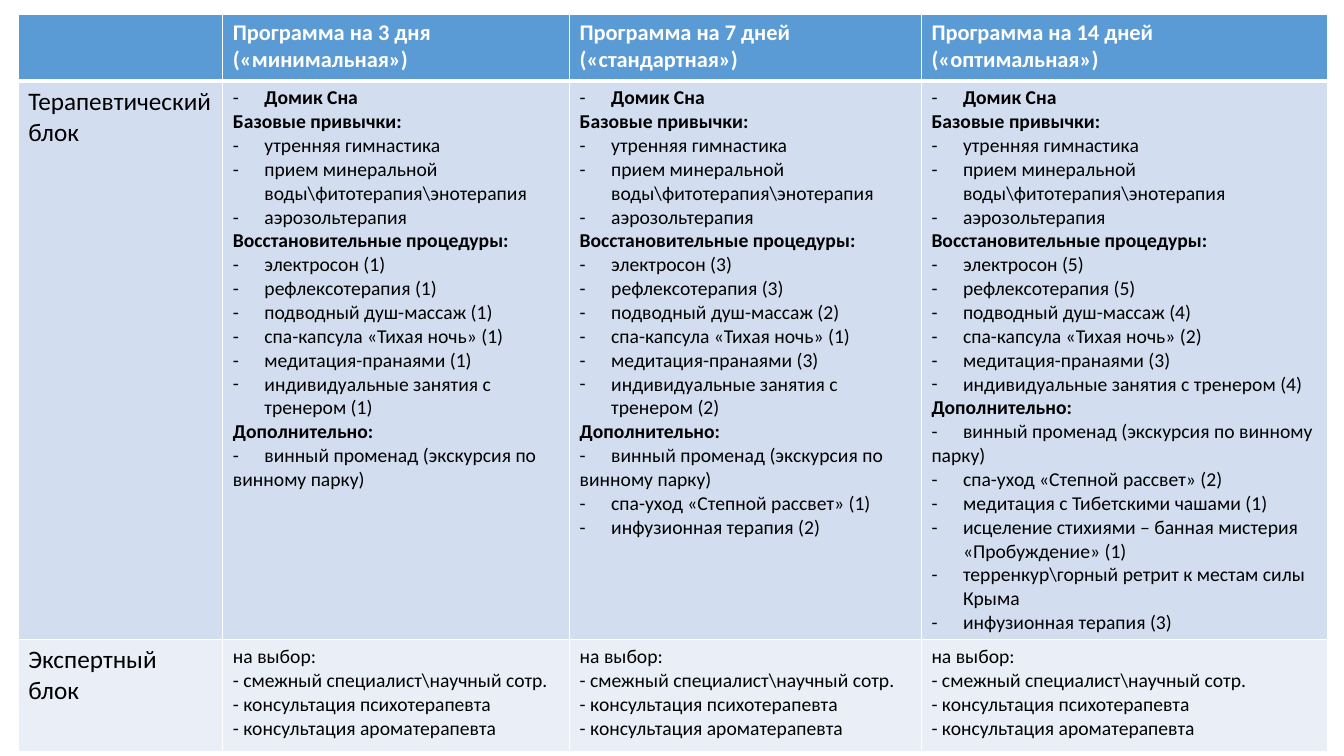
"""Build the slide with the table of sleep programmes for 3, 7 and 14 days."""
import lxml.etree
import pptx
import pptx.dml.color
import pptx.oxml.ns
import pptx.util

WHITE = pptx.dml.color.RGBColor(0xFF, 0xFF, 0xFF)
BLACK = pptx.dml.color.RGBColor(0x00, 0x00, 0x00)
HEADER_BLUE = pptx.dml.color.RGBColor(0x5B, 0x9B, 0xD5)
THERAPY_BLUE = pptx.dml.color.RGBColor(0xD2, 0xDE, 0xEF)
EXPERT_BLUE = pptx.dml.color.RGBColor(0xEA, 0xEF, 0xF7)

COLUMN_WIDTHS = [146.2, 247.7, 251.3, 290.2]
ROW_HEIGHTS = [48, 396, 80]
ROW_FILLS = [HEADER_BLUE, THERAPY_BLUE, EXPERT_BLUE]
BULLET_INDENT = pptx.util.Pt(22.5)

HEADER = {"size": pptx.util.Pt(16), "bold": True}
LABEL = {"size": pptx.util.Pt(18), "bold": False}
BODY = {"size": pptx.util.Pt(14), "bold": False}
BOLD_BODY = {"size": pptx.util.Pt(14), "bold": True}

HABITS = ["утренняя гимнастика", r"прием минеральной воды\фитотерапия\энотерапия", "аэрозольтерапия"]
PROCEDURES = [
    "электросон",
    "рефлексотерапия",
    "подводный душ-массаж",
    "спа-капсула «Тихая ночь»",
    "медитация-пранаями",
    "индивидуальные занятия с тренером",
]
WINE_WALK = "-\tвинный променад (экскурсия по винному парку)"
EXPERTS = [
    "на выбор:",
    r"- смежный специалист\научный сотр.",
    "- консультация психотерапевта",
    "- консультация ароматерапевта",
]
PROGRAMMES = [
    ("Программа на 3 дня", "(«минимальная»)", [1, 1, 1, 1, 1, 1], []),
    ("Программа на 7 дней", "(«стандартная»)", [3, 3, 2, 1, 3, 2],
     ["спа-уход «Степной рассвет» (1)", "инфузионная терапия (2)"]),
    ("Программа на 14 дней", "(«оптимальная»)", [5, 5, 4, 2, 3, 4],
     ["спа-уход «Степной рассвет» (2)",
      "медитация с Тибетскими чашами (1)",
      "исцеление стихиями – банная мистерия «Пробуждение» (1)",
      r"терренкур\горный ретрит к местам силы Крыма",
      "инфузионная терапия (3)"]),
]


def add_child(parent, tag, **attributes):
    child = lxml.etree.SubElement(parent, pptx.oxml.ns.qn(tag))
    for name, value in attributes.items():
        child.set(name, str(value))
    return child


def fill_cell(cell, lines, color):
    for index, (text, text_format, bulleted) in enumerate(lines):
        paragraphs = cell.text_frame.paragraphs
        paragraph = cell.text_frame.add_paragraph() if index else paragraphs[0]
        run = paragraph.add_run()
        run.text = text
        run.font.name = "Calibri"
        run.font.color.rgb = color
        for name, value in text_format.items():
            setattr(run.font, name, value)
        properties = paragraph._p.get_or_add_pPr()
        if bulleted:
            properties.set("marL", str(BULLET_INDENT))
            properties.set("indent", str(-BULLET_INDENT))
            add_child(properties, "a:buFont", typeface="Calibri")
            add_child(properties, "a:buChar", char="-")
        elif "\t" in text:
            tab_list = add_child(properties, "a:tabLst")
            add_child(tab_list, "a:tab", pos=BULLET_INDENT, algn="l")


presentation = pptx.Presentation()
presentation.slide_width = pptx.util.Pt(960)
presentation.slide_height = pptx.util.Pt(540)
slide = presentation.slides.add_slide(presentation.slide_layouts[6])

table = slide.shapes.add_table(
    len(ROW_HEIGHTS), len(COLUMN_WIDTHS),
    pptx.util.Pt(13), pptx.util.Pt(10),
    pptx.util.Pt(sum(COLUMN_WIDTHS)), pptx.util.Pt(sum(ROW_HEIGHTS)),
).table
for column, width in zip(table.columns, COLUMN_WIDTHS):
    column.width = pptx.util.Pt(width)

for row_index, (row, height, fill) in enumerate(zip(table.rows, ROW_HEIGHTS, ROW_FILLS)):
    row.height = pptx.util.Pt(height)
    for cell in row.cells:
        cell_properties = cell._tc.get_or_add_tcPr()
        for side in "LRTB":
            under_header = (row_index, side) in [(0, "B"), (1, "T")]
            border_width = pptx.util.Pt(3 if under_header else 1)
            border = add_child(cell_properties, f"a:ln{side}", w=border_width)
            add_child(add_child(border, "a:solidFill"), "a:srgbClr", val=WHITE)
        cell.fill.solid()
        cell.fill.fore_color.rgb = fill

fill_cell(table.cell(1, 0), [("Терапевтический блок", LABEL, False)], BLACK)
fill_cell(table.cell(2, 0), [("Экспертный блок", LABEL, False)], BLACK)

for column_index, (title, subtitle, counts, extras) in enumerate(PROGRAMMES, start=1):
    therapy = [
        ("Домик Сна", BOLD_BODY, True),
        ("Базовые привычки:", BOLD_BODY, False),
        *[(habit, BODY, True) for habit in HABITS],
        ("Восстановительные процедуры:", BOLD_BODY, False),
        *[(f"{name} ({count})", BODY, True) for name, count in zip(PROCEDURES, counts)],
        ("Дополнительно:", BOLD_BODY, False),
        (WINE_WALK, BODY, False),
        *[(extra, BODY, True) for extra in extras],
    ]
    heading = [(title, HEADER, False), (subtitle, HEADER, False)]
    experts = [(line, BODY, False) for line in EXPERTS]
    fill_cell(table.cell(0, column_index), heading, WHITE)
    fill_cell(table.cell(1, column_index), therapy, BLACK)
    fill_cell(table.cell(2, column_index), experts, BLACK)

presentation.save("out.pptx")
